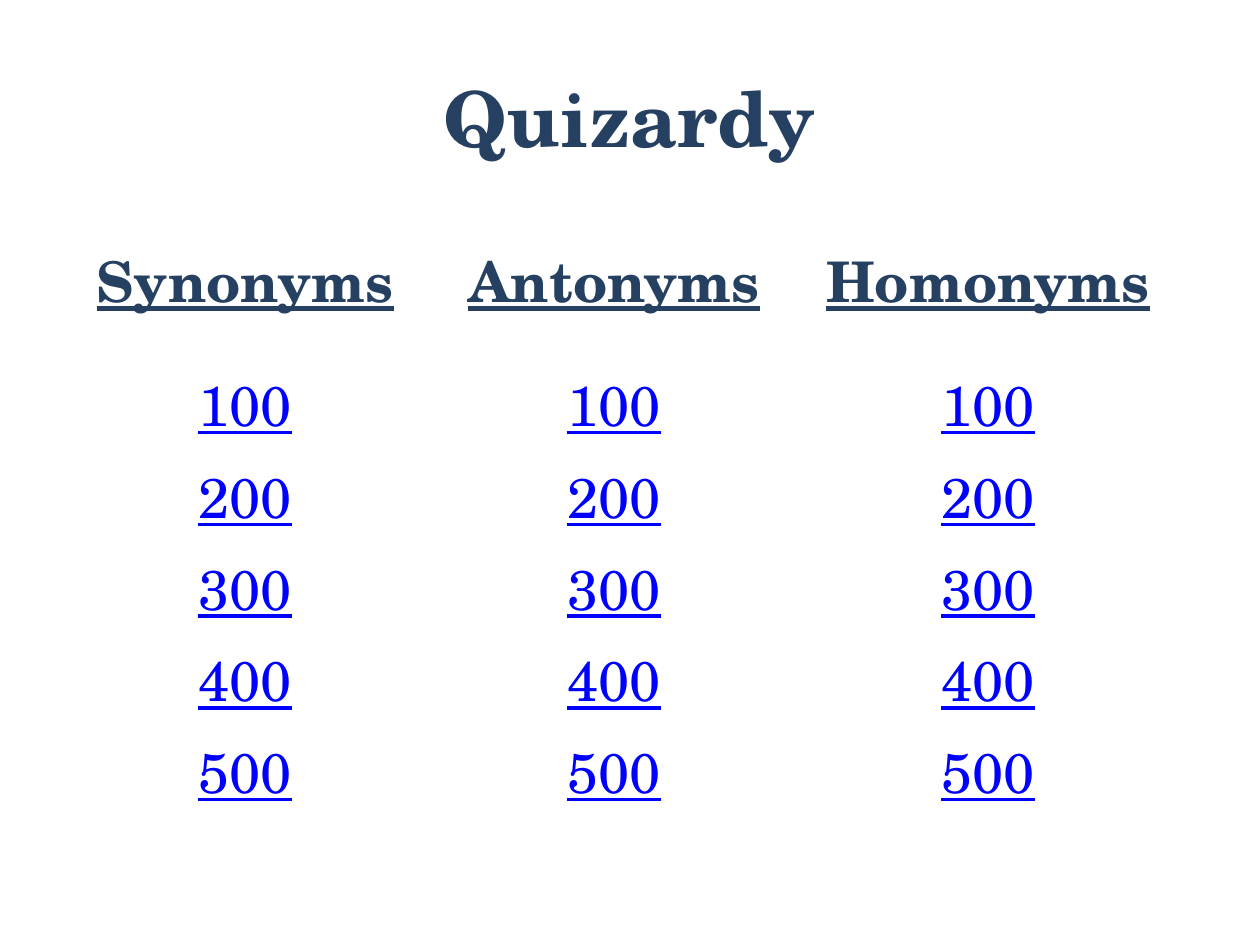
import pptx
import pptx.dml.color
import pptx.enum.text
import pptx.util
from pptx.util import Cm

NAVY = "254061"
LINK_BLUE = "0000FF"


def color(hex_value):
    return pptx.dml.color.RGBColor.from_string(hex_value)


class QuizBoard:
    font_name = "TeX Gyre Schola"

    def __init__(self, slide):
        self.slide = slide

    def style(self, paragraph, size, hex_value, bold, underline=False):
        paragraph.alignment = pptx.enum.text.PP_ALIGN.CENTER
        font = paragraph.font
        font.name = self.font_name
        font.size = pptx.util.Pt(size)
        font.bold = bold
        font.underline = underline
        font.color.rgb = color(hex_value)

    def title(self, text, left, top, width, height):
        heading = self.slide.shapes.add_textbox(left, top, width, height).text_frame
        heading.word_wrap = True
        heading.vertical_anchor = pptx.enum.text.MSO_ANCHOR.MIDDLE
        heading.text = text
        self.style(heading.paragraphs[0], 44, NAVY, bold=True)

    def table(self, rows, left, top, column_widths, row_heights):
        """Add an unfilled table whose first row holds the categories."""
        board = self.slide.shapes.add_table(
            len(rows), len(column_widths), left, top,
            sum(column_widths), sum(row_heights)).table
        board.first_row = False
        board.horz_banding = False
        for column, width in zip(board.columns, column_widths):
            column.width = width
        for row, height in zip(board.rows, row_heights):
            row.height = height
        for row_index, values in enumerate(rows):
            is_header = row_index == 0
            for column_index, value in enumerate(values):
                cell = board.cell(row_index, column_index)
                cell.fill.background()
                cell.text = value
                self.style(cell.text_frame.paragraphs[0], 32,
                           NAVY if is_header else LINK_BLUE,
                           bold=is_header, underline=True)


def main():
    presentation = pptx.Presentation()
    presentation.slide_width = Cm(25.4)
    presentation.slide_height = Cm(19.05)
    board = QuizBoard(presentation.slides.add_slide(presentation.slide_layouts[6]))

    board.title("Quizardy", Cm(1.27), Cm(0.76), Cm(22.86), Cm(3.18))

    categories = ["Synonyms", "Antonyms", "Homonyms"]
    points = [[str(value)] * len(categories) for value in range(100, 600, 100)]
    board.table([categories] + points, Cm(1.27), Cm(4.65),
                column_widths=[Cm(7.34), Cm(7.54), Cm(7.54)],
                row_heights=[Cm(2.54)] + [Cm(1.85)] * len(points))

    presentation.save("out.pptx")


if __name__ == "__main__":
    main()
